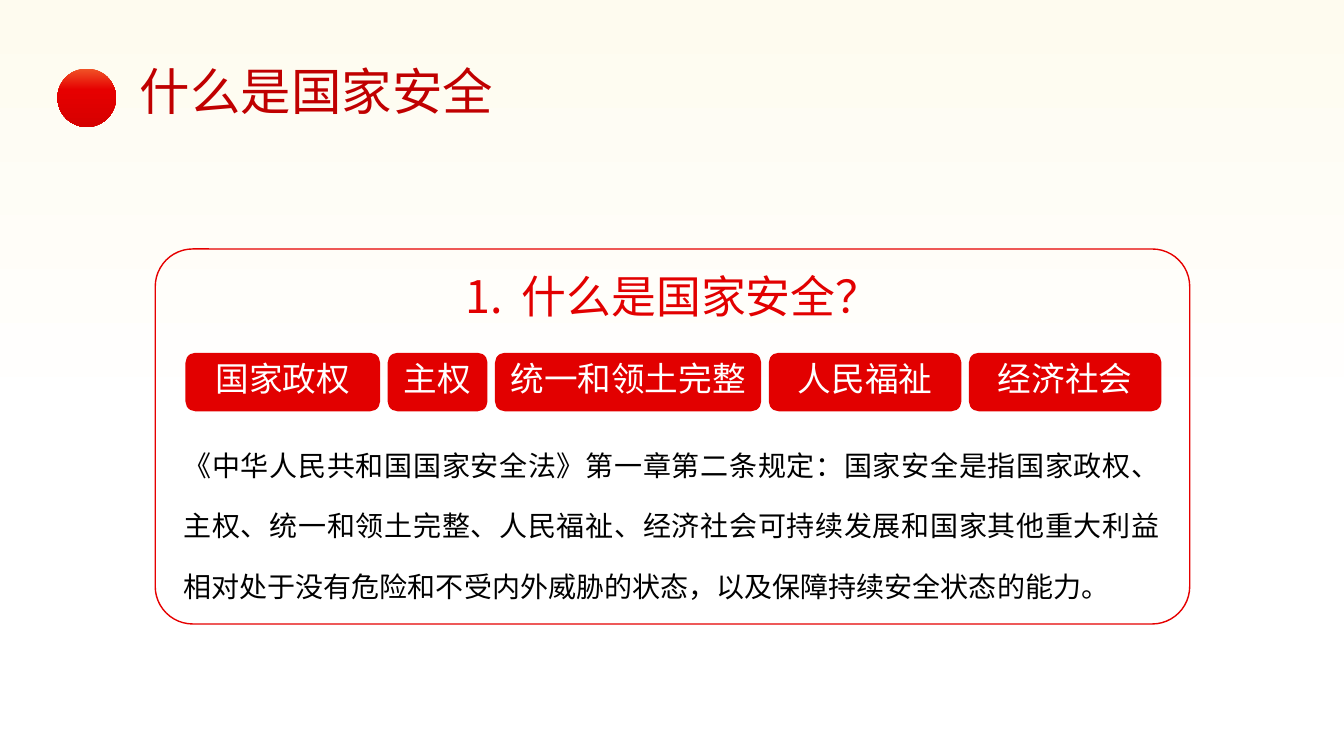
from lxml import etree
from pptx import Presentation
from pptx.dml.color import RGBColor
from pptx.enum.shapes import MSO_SHAPE as Preset
from pptx.enum.text import MSO_ANCHOR as Anchor, MSO_AUTO_SIZE as AutoSize, PP_ALIGN as Align
from pptx.oxml.ns import qn
from pptx.util import Inches, Pt

WIDTH, HEIGHT = 13.33, 7.5
FONT = "Noto Sans CJK SC"
COLORS = {
    "title": "C00000", "red": "E20000", "border": "E60000",
    "text": "000000", "white": "FFFFFF", "cream": "FEFBEF",
    "ball_top": "F05327", "ball_middle": "E60000", "ball_bottom": "D60000",
}
CHIP_GAP = 0.075
CHIPS = [("国家政权", 1.93), ("主权", 0.99), ("统一和领土完整", 2.64),
         ("人民福祉", 1.91), ("经济社会", 1.91)]
DEFINITION = (
    "《中华人民共和国国家安全法》第一章第二条规定：国家安全是指国家政权、主权、"
    "统一和领土完整、人民福祉、经济社会可持续发展和国家其他重大利益相对处于没有"
    "危险和不受内外威胁的状态，以及保障持续安全状态的能力。"
)


def color(name):
    return RGBColor.from_string(COLORS[name])


def add_shape(slide, preset, box, fill=None, line=None):
    shape = slide.shapes.add_shape(preset, *map(Inches, box))
    shape.shadow.inherit = False
    if fill:
        shape.fill.solid()
        shape.fill.fore_color.rgb = color(fill)
    else:
        shape.fill.background()
    if line:
        shape.line.color.rgb = color(line)
        shape.line.width = Pt(1)
    else:
        shape.line.fill.background()
    return shape


def fill_downwards(shape, stops):
    """Fill a shape from top to bottom with (percent, colour name) stops."""
    shape.fill.gradient()
    shape.fill.gradient_angle = 270
    stop_list = shape.fill._fill._gradFill.find(qn("a:gsLst"))
    for stop in list(stop_list):
        stop_list.remove(stop)
    for percent, name in stops:
        stop = etree.SubElement(stop_list, qn("a:gs"), pos=str(percent * 1000))
        etree.SubElement(stop, qn("a:srgbClr"), val=COLORS[name])


def write(shape, text, size, name, align, insets=(0.1, 0.05, 0.1, 0.05),
          numbered=False, spacing=None):
    frame = shape.text_frame
    frame.word_wrap = True
    (frame.margin_left, frame.margin_top,
     frame.margin_right, frame.margin_bottom) = map(Inches, insets)
    paragraph = frame.paragraphs[0]
    paragraph.text = text
    paragraph.alignment = align
    if spacing:
        paragraph.line_spacing = spacing
    properties = paragraph._p.get_or_add_pPr()
    if numbered:
        indent = Inches(0.56)
        properties.set("marL", str(indent))
        properties.set("indent", str(-indent))
        etree.SubElement(properties, qn("a:buFont"), typeface=FONT)
        etree.SubElement(properties, qn("a:buAutoNum"), type="arabicPeriod")
    font = paragraph.font
    font.size = Pt(size)
    font.color.rgb = color(name)
    font.name = FONT
    etree.SubElement(properties.find(qn("a:defRPr")), qn("a:ea"), typeface=FONT)


def add_text(slide, box, *args, **options):
    text_box = slide.shapes.add_textbox(*map(Inches, box))
    write(text_box, *args, **options)
    text_box.text_frame.auto_size = AutoSize.SHAPE_TO_FIT_TEXT


def add_background(slide):
    backdrop = add_shape(slide, Preset.RECTANGLE, (0, 0, WIDTH, HEIGHT))
    fill_downwards(backdrop, [(0, "cream"), (57, "white")])


def add_header(slide, left, top):
    ball = add_shape(slide, Preset.OVAL, (left, top + 0.13, 0.58, 0.58))
    fill_downwards(ball, [(0, "ball_top"), (36, "ball_middle"), (100, "ball_bottom")])
    add_text(slide, (left + 0.72, top, 4.04, 0.71),
             "什么是国家安全", 36, "title", Align.JUSTIFY)


def add_chips(slide, left, top):
    for label, width in CHIPS:
        chip = add_shape(slide, Preset.ROUNDED_RECTANGLE, (left, top, width, 0.58), "red")
        write(chip, label, 24, "white", Align.CENTER, insets=(0.1, 0.05, 0.1, 0.12))
        chip.text_frame.vertical_anchor = Anchor.MIDDLE
        left += width + CHIP_GAP


def add_card(slide, left, top, width, height):
    # Keyword chips
    add_chips(slide, left + 0.3, top + 1.03)
    # Numbered question and its answer
    add_text(slide, (left + 2.78, top + 0.15, 4.71, 0.64),
             "什么是国家安全？", 32, "red", Align.CENTER, numbered=True)
    add_text(slide, (left + 0.16, top + 1.65, width - 0.34, 1.93),
             DEFINITION, 20, "text", Align.JUSTIFY,
             insets=(0.12, 0.06, 0.12, 0.06), spacing=1.8)
    # Rounded frame
    frame = add_shape(slide, Preset.ROUNDED_RECTANGLE,
                      (left, top, width, height), line="border")
    frame.adjustments[0] = 0.1


def main():
    presentation = Presentation()
    presentation.slide_width = Inches(WIDTH)
    presentation.slide_height = Inches(HEIGHT)
    slide = presentation.slides.add_slide(presentation.slide_layouts[6])
    add_background(slide)
    add_header(slide, 0.57, 0.55)
    add_card(slide, 1.54, 2.47, 10.26, 3.72)
    presentation.save("out.pptx")


if __name__ == "__main__":
    main()
